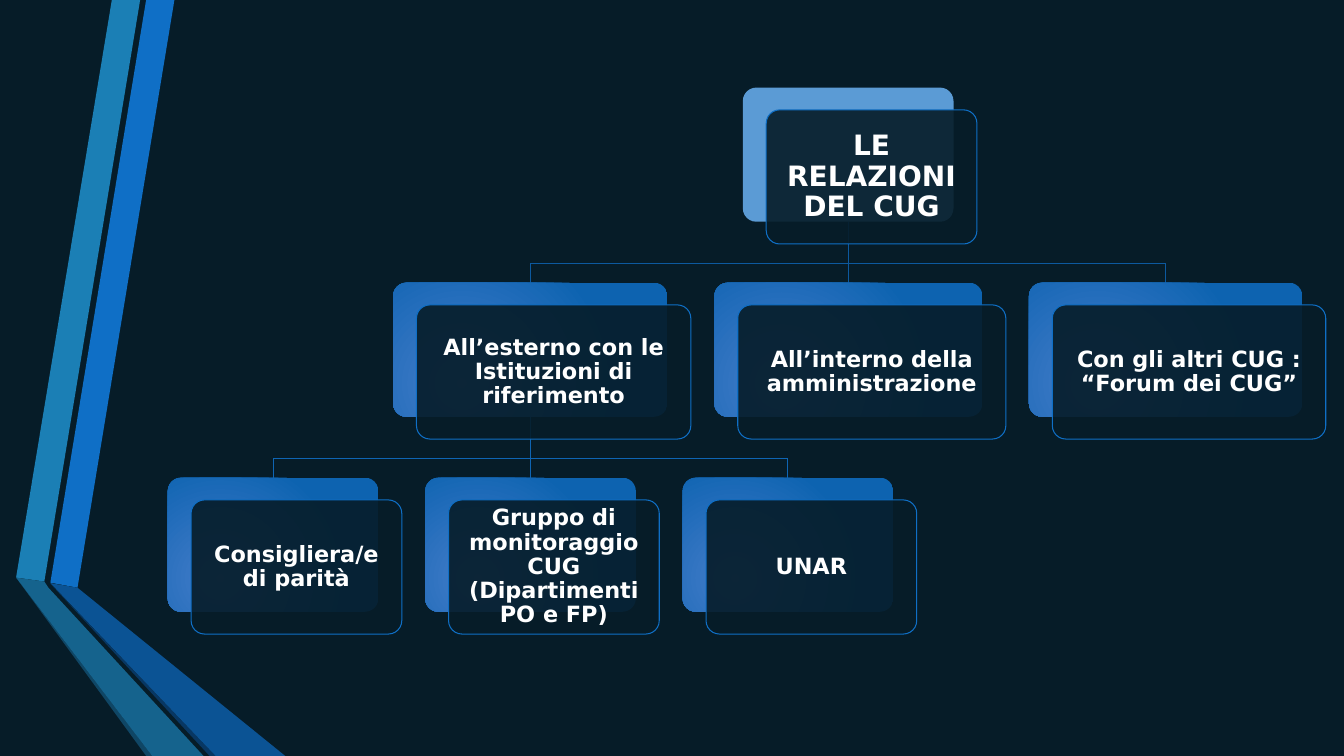
from dataclasses import dataclass

from lxml import etree
from pptx import Presentation
from pptx.dml.color import RGBColor
from pptx.enum.shapes import MSO_CONNECTOR, MSO_SHAPE
from pptx.enum.text import MSO_ANCHOR, PP_ALIGN
from pptx.oxml.ns import qn
from pptx.shapes.autoshape import Shape
from pptx.slide import Slide
from pptx.util import Pt

ROUNDED = MSO_SHAPE.ROUNDED_RECTANGLE
STRAIGHT = MSO_CONNECTOR.STRAIGHT
MIDDLE = MSO_ANCHOR.MIDDLE
CENTER = PP_ALIGN.CENTER

COLORS = {
    "night": "061C28",
    "text": "FFFFFF",
    "outline": "0F6FC6",
    "root": "5B9BD5",
    "glow": "447CCA",
    "deep": "0D63B0",
    "upper_line": "0C599F",
    "lower_line": "0E65B4",
    "blue": "0F6FC6",
    "teal": "1B7FB5",
    "teal_edge": "0F4665",
    "blue_edge": "083763",
    "blue_fold": "0B5394",
    "teal_fold": "15638D",
}
FONT = "DejaVu Sans"
SLIDE_WIDTH, SLIDE_HEIGHT = 960, 540
CARD_WIDTH, CARD_HEIGHT = 150.5, 95.8
PANEL_SHIFT_X, PANEL_SHIFT_Y = 16.7, 15.9
ROW_TOPS = [62.6 + 139.3 * row for row in range(3)]
BOTTOM_LEFTS = [119.8 + 183.9 * column for column in range(3)]
BUS_RISE = 14


@dataclass(frozen=True)
class Card:
    text: str
    left: float
    row: int
    width: float = CARD_WIDTH
    size: float = 16
    inset: float = 5

    @property
    def top(self) -> float:
        return ROW_TOPS[self.row]

    @property
    def center(self) -> float:
        return self.left + self.width / 2


@dataclass(frozen=True)
class Ribbon:
    color: str
    points: tuple[tuple[float, float], ...]


RIBBONS = [
    Ribbon("blue", ((36, 416.2), (55.4, 419.8), (124.6, 0), (104.4, 0))),
    Ribbon("teal", ((100.1, 0), (79.9, 0), (11.5, 412.6), (31.7, 415.4))),
    Ribbon("teal_edge", ((11.5, 412.6), (104.4, 540), (108.7, 540))),
    Ribbon("blue_edge", ((36, 416.9), (149.8, 540), (154.1, 540))),
    Ribbon("blue_fold", ((36, 416.5), (154.1, 540), (203.8, 540), (55.4, 419.8))),
    Ribbon("teal_fold", ((145.4, 540), (34.6, 419.8), (31.7, 415.4),
                         (11.5, 412.6), (108.7, 540))),
]

ROOT = Card("LE RELAZIONI DEL CUG", 530.6, 0, size=20, inset=5.8)
OUTSIDE = Card("All’esterno con le Istituzioni di riferimento", 280.8, 1, 196)
BRANCHES = [
    OUTSIDE,
    Card("All’interno della amministrazione", 510.3, 1, 191.5),
    Card("Con gli altri CUG : “Forum dei CUG”", 735, 1, 195.3),
]
INSTITUTIONS = [
    Card(text, left, 2)
    for text, left in zip(
        ("Consigliera/e di parità",
         "Gruppo di monitoraggio CUG (Dipartimenti PO e FP)",
         "UNAR"),
        BOTTOM_LEFTS,
    )
]


def rgb(name: str) -> RGBColor:
    return RGBColor.from_string(COLORS[name])


def paint(shape: Shape, color: str) -> None:
    """Give a flat fill without outline or shadow."""
    shape.shadow.inherit = False
    shape.fill.solid()
    shape.fill.fore_color.rgb = rgb(color)
    shape.line.fill.background()


def draw_ribbon(page: Slide, ribbon: Ribbon) -> None:
    first, *rest = [(Pt(x), Pt(y)) for x, y in ribbon.points]
    builder = page.shapes.build_freeform(*first, scale=1.0)
    builder.add_line_segments(rest, close=True)
    paint(builder.convert_to_shape(), ribbon.color)


def draw_line(page: Slide, color: str, start: tuple[float, float],
              end: tuple[float, float]) -> None:
    line = page.shapes.add_connector(
        STRAIGHT, Pt(start[0]), Pt(start[1]), Pt(end[0]), Pt(end[1]))
    line.line.color.rgb = rgb(color)
    line.line.width = Pt(0.75)
    etree.SubElement(line._element.spPr, qn("a:effectLst"))


def link(page: Slide, parent: Card, children: list[Card], color: str) -> None:
    """Draw a trunk, a bus and one drop per child."""
    top = children[0].top
    bus = top - BUS_RISE
    draw_line(page, color, (parent.center, parent.top + CARD_HEIGHT),
              (parent.center, bus))
    draw_line(page, color, (children[0].center, bus), (children[-1].center, bus))
    for child in children:
        draw_line(page, color, (child.center, bus), (child.center, top))


def apply_glow(shape: Shape) -> None:
    """Fill with a round gradient that starts at the lower left."""
    shape.fill.gradient()
    for stop, color in zip(shape.fill.gradient_stops, ("glow", "deep")):
        stop.color.rgb = rgb(color)
    gradient = shape._element.spPr.find(qn("a:gradFill"))
    gradient.remove(gradient.find(qn("a:lin")))
    circle = etree.Element(qn("a:path"), path="circle")
    etree.SubElement(circle, qn("a:fillToRect"),
                     l="50000", t="100000", r="100000", b="50000")
    gradient.find(qn("a:gsLst")).addnext(circle)


def add_rounded(page: Slide, left: float, top: float, width: float,
                color: str) -> Shape:
    box = page.shapes.add_shape(ROUNDED, Pt(left), Pt(top), Pt(width), Pt(CARD_HEIGHT))
    box.adjustments[0] = 0.1
    paint(box, color)
    return box


def draw_card(page: Slide, card: Card) -> None:
    """Draw the coloured back and the see-through panel with the text."""
    back = add_rounded(page, card.left, card.top, card.width, "root")
    if card.row > 0:
        apply_glow(back)

    panel = add_rounded(page, card.left + PANEL_SHIFT_X, card.top + PANEL_SHIFT_Y,
                        card.width, "night")
    fill_color = panel._element.spPr.find(qn("a:solidFill")).find(qn("a:srgbClr"))
    etree.SubElement(fill_color, qn("a:alpha"), val="90000")
    panel.line.color.rgb = rgb("outline")
    panel.line.width = Pt(0.75)

    frame = panel.text_frame
    frame.word_wrap = True
    frame.vertical_anchor = MIDDLE
    frame.margin_left = frame.margin_right = Pt(card.inset)
    frame.margin_top = frame.margin_bottom = Pt(card.inset)
    para = frame.paragraphs[0]
    para.text = card.text
    para.alignment = CENTER
    para.line_spacing = 0.9
    para.font.name = FONT
    para.font.size = Pt(card.size)
    para.font.bold = True
    para.font.color.rgb = rgb("text")


def main() -> None:
    deck = Presentation()
    deck.slide_width, deck.slide_height = Pt(SLIDE_WIDTH), Pt(SLIDE_HEIGHT)
    page = deck.slides.add_slide(deck.slide_layouts[6])
    page.background.fill.solid()
    page.background.fill.fore_color.rgb = rgb("night")

    for ribbon in RIBBONS:
        draw_ribbon(page, ribbon)
    link(page, ROOT, BRANCHES, "upper_line")
    link(page, OUTSIDE, INSTITUTIONS, "lower_line")
    for card in [ROOT, *BRANCHES, *INSTITUTIONS]:
        draw_card(page, card)
    deck.save("out.pptx")


if __name__ == "__main__":
    main()
